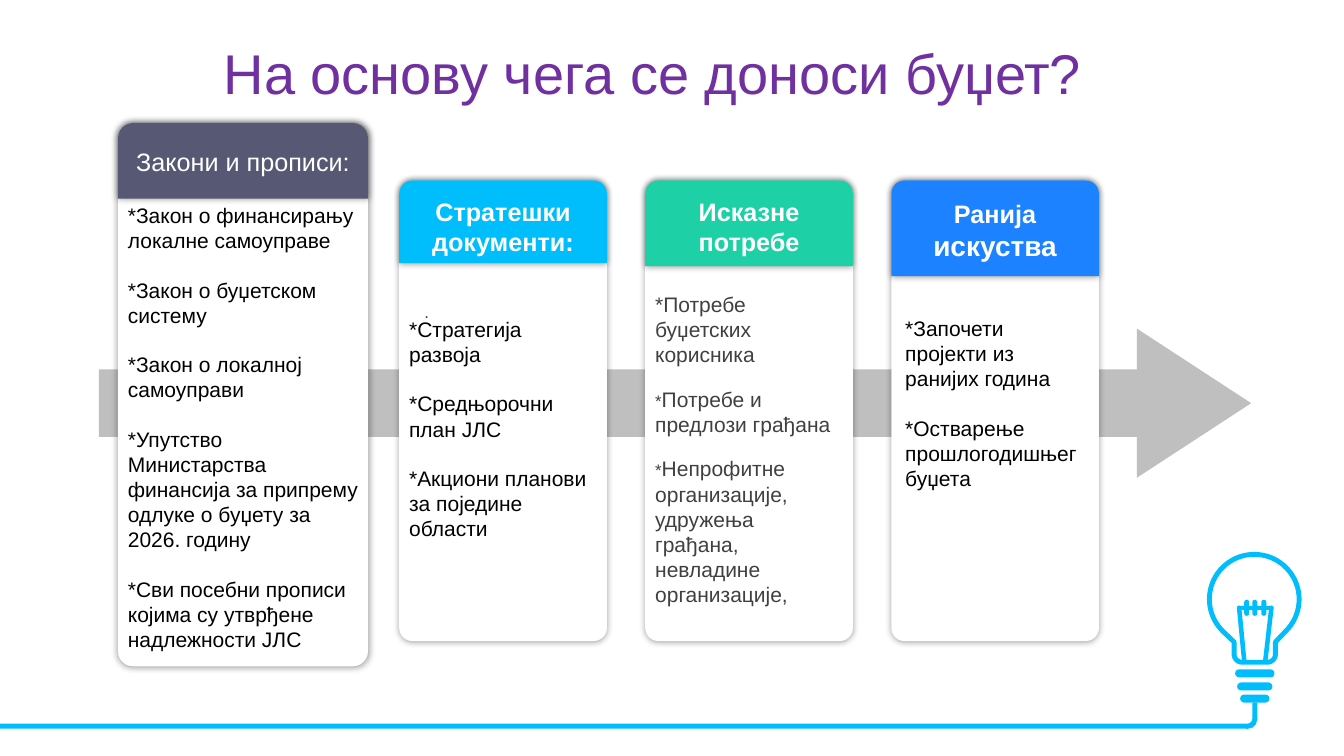
import math
from dataclasses import dataclass

from lxml import etree
from pptx import Presentation
from pptx.dml.color import RGBColor
from pptx.enum.shapes import MSO_CONNECTOR, MSO_SHAPE
from pptx.enum.text import MSO_ANCHOR, MSO_AUTO_SIZE, PP_ALIGN
from pptx.oxml import parse_xml
from pptx.oxml.ns import nsdecls, qn
from pptx.util import Pt

EMU_PER_PX = 9144  # 100 px to the inch
TITLE_ONLY = 5
RECT, PILL, ARROW = MSO_SHAPE.RECTANGLE, MSO_SHAPE.ROUNDED_RECTANGLE, MSO_SHAPE.RIGHT_ARROW
TOP_ROUNDED, BEND = MSO_SHAPE.ROUND_2_SAME_RECTANGLE, MSO_SHAPE.BLOCK_ARC
STRAIGHT = MSO_CONNECTOR.STRAIGHT
TOP, MIDDLE = MSO_ANCHOR.TOP, MSO_ANCHOR.MIDDLE
LEFT, CENTER = PP_ALIGN.LEFT, PP_ALIGN.CENTER
NO_AUTOFIT = MSO_AUTO_SIZE.NONE


@dataclass(frozen=True)
class Theme:
    font: str = "Arial"
    title: str = "7030A0"
    white: str = "FFFFFF"
    black: str = "000000"
    grey_text: str = "404040"
    arrow: str = "BFBFBF"
    laws: str = "565874"
    strategy: str = "00BDFB"
    needs: str = "1ED0A6"
    experience: str = "1C82FF"
    title_pt: float = 40
    heading_pt: float = 18
    large_heading_pt: float = 20
    body_pt: float = 15
    small_pt: float = 12


THEME = Theme()


@dataclass(frozen=True)
class Box:
    left: int
    top: int
    width: int
    height: int

    def emu(self) -> list[int]:
        return [px(v) for v in (self.left, self.top, self.width, self.height)]


@dataclass(frozen=True)
class Run:
    text: str
    size: float = THEME.body_pt
    color: str = THEME.black
    bold: bool = False


@dataclass(frozen=True)
class Card:
    frame: Box
    radius: int
    header_height: int
    header_color: str
    heading: list[Run]
    heading_inset: int
    body: Box
    items: list[list[Run]]
    item_gap: float = 17.25


def px(value: float) -> int:
    return round(value * EMU_PER_PX)


def heading(text: str, size: float = THEME.heading_pt, bold: bool = True) -> Run:
    return Run(text, size, THEME.white, bold)


def need(text: str, star_size: float = THEME.small_pt) -> list[Run]:
    return [Run("*", star_size, THEME.grey_text), Run(text, color=THEME.grey_text)]


def write(frame, paragraphs: list[list[Run]], align=LEFT, gap: float = 0,
          anchor=TOP, inset_x: int = 10, inset_top: int = 5) -> None:
    settings = {"word_wrap": True, "auto_size": NO_AUTOFIT, "vertical_anchor": anchor,
                "margin_left": px(inset_x), "margin_right": px(inset_x),
                "margin_top": px(inset_top), "margin_bottom": px(5)}
    for name, value in settings.items():
        setattr(frame, name, value)
    for index, runs in enumerate(paragraphs):
        paragraph = frame.add_paragraph() if index else frame.paragraphs[0]
        paragraph.alignment = align
        if index:
            paragraph.space_before = Pt(gap)
        for part in runs:
            run = paragraph.add_run()
            run.text = part.text
            for name, value in {"name": THEME.font, "size": Pt(part.size), "bold": part.bold}.items():
                setattr(run.font, name, value)
            run.font.color.rgb = RGBColor.from_string(part.color)


def paint(shape, color: str) -> None:
    shape.shadow.inherit = False
    shape.fill.solid()
    shape.fill.fore_color.rgb = RGBColor.from_string(color)
    shape.line.fill.background()


def add_block(slide, kind, box: Box, color: str, adjustments: tuple[float, ...] = ()):
    shape = slide.shapes.add_shape(kind, *box.emu())
    for index, value in enumerate(adjustments):
        shape.adjustments[index] = value
    paint(shape, color)
    return shape


def add_glow(shape) -> None:
    """Put a soft, centred dark shadow behind the shape."""
    shape._element.spPr.find(qn("a:effectLst")).append(parse_xml(
        f'<a:outerShdw {nsdecls("a")} blurRad="63500" dist="0" dir="0" algn="ctr" rotWithShape="0">'
        f'<a:srgbClr val="{THEME.black}"><a:alpha val="40000"/></a:srgbClr></a:outerShdw>'))


def add_text(slide, box: Box, paragraphs: list[list[Run]], gap: float = 0) -> None:
    write(slide.shapes.add_textbox(*box.emu()).text_frame, paragraphs, gap=gap)


def add_card(slide, card: Card) -> None:
    frame = card.frame
    header_box = Box(frame.left, frame.top, frame.width, card.header_height)
    panel = add_block(slide, PILL, frame, THEME.white, (card.radius / frame.width,))
    header = add_block(slide, TOP_ROUNDED, header_box, card.header_color,
                       (card.radius / card.header_height, 0))
    for part in (panel, header):
        add_glow(part)
    write(header.text_frame, [card.heading], CENTER, inset_x=5, inset_top=card.heading_inset)
    add_text(slide, card.body, card.items, card.item_gap)


def arc(x: float, y: float, radius: float, start: int, end: int) -> list[tuple[int, int]]:
    """Points along a circle, angles in degrees clockwise from the right."""
    steps = 3 * max(4, abs(end - start) // 15)
    angles = [math.radians(start + (end - start) * i / steps) for i in range(steps + 1)]
    return [(px(x + radius * math.cos(a)), px(y + radius * math.sin(a))) for a in angles]


def add_bulb(slide) -> None:
    center, color = 1244, THEME.strategy
    outline = (arc(center, 594.5, 44.5, 135, 405)
               + [(px(1265), px(637))] + arc(1257, 649, 8, 0, 90)
               + arc(1232, 649, 8, 90, 180) + [(px(1224), px(637))])
    builder = slide.shapes.build_freeform(*outline[0], scale=1.0)
    builder.add_line_segments(outline[1:], close=True)
    glass = builder.convert_to_shape()
    paint(glass, THEME.white)
    glass.line.color.rgb = RGBColor.from_string(color)
    glass.line.width = Pt(3.5)

    for width, top in ((39, 664), (35, 677), (29, 689)):
        add_block(slide, PILL, Box(center - width // 2, top, width, 8), color, (0.5,))
    add_block(slide, PILL, Box(1227, 601, 36, 4), color, (0.5,))
    for left in (1234, 1242, 1251):
        add_block(slide, PILL, Box(left, 595, 5, 16), color, (0.5,))
    for top_x, bottom_x in ((1229, 1234), (1261, 1255)):
        leg = slide.shapes.add_connector(STRAIGHT, px(top_x), px(603), px(bottom_x), px(655))
        leg.line.color.rgb = RGBColor.from_string(color)
        leg.line.width = Pt(3.25)
        leg.line._get_or_add_ln().set("cap", "rnd")
        etree.SubElement(leg._element.spPr, qn("a:effectLst"))

    add_block(slide, RECT, Box(0, 718, 1237, 5), color)
    add_block(slide, RECT, Box(1242, 697, 5, 17), color)
    add_block(slide, BEND, Box(1228, 704, 19, 19), color, (213.39, 60.92, 0.27))


CARDS = [
    Card(Box(117, 122, 248, 539), 15, 75, THEME.laws,
         [heading("Закони и прописи:", bold=False)], 19, Box(117, 196, 248, 464),
         [[Run("*Закон о финансирању локалне самоуправе")],
          [Run("*Закон о буџетском систему")],
          [Run("*Закон о локалној самоуправи")],
          [Run("*Упутство Министарства финансија за припрему одлуке о буџету за 2026. годину")],
          [Run("*Сви посебни прописи којима су утврђене надлежности ЈЛС")]]),
    Card(Box(396, 179, 206, 457), 13, 82, THEME.strategy,
         [heading("Стратешки документи:")], 12, Box(396, 309, 206, 237),
         [[Run("*Стратегија развоја")],
          [Run("*Средњорочни план ЈЛС")],
          [Run("*Акциони планови за поједине области")]]),
    Card(Box(640, 179, 206, 457), 13, 85, THEME.needs,
         [heading("Исказне потребе")], 12, Box(640, 284, 206, 323),
         [need("Потребе буџетских корисника", THEME.body_pt),
          need("Потребе и предлози грађана"),
          need("Непрофитне организације, удружења грађана, невладине организације,")], 13.8),
    Card(Box(884, 179, 206, 457), 13, 95, THEME.experience,
         [heading("Ранија"), heading(" искуства", THEME.large_heading_pt)], 11,
         Box(888, 308, 198, 200),
         [[Run("*Започети пројекти из ранијих година")],
          [Run("*Остварење прошлогодишњег буџета")]]),
]


def main() -> None:
    deck = Presentation()
    deck.slide_width, deck.slide_height = px(1333), px(750)
    slide = deck.slides.add_slide(deck.slide_layouts[TITLE_ONLY])

    title = slide.shapes.title
    title.left, title.top, title.width, title.height = Box(14, 36, 1266, 79).emu()
    write(title.text_frame, [[Run("На основу чега се доноси буџет?", THEME.title_pt, THEME.title)]],
          CENTER, anchor=MIDDLE)
    title.text_frame.paragraphs[0].line_spacing = 0.9

    add_bulb(slide)
    add_block(slide, ARROW, Box(98, 326, 1143, 148), THEME.arrow, (0.453, 0.766))
    for card in CARDS:
        add_card(slide, card)
    add_text(slide, Box(411, 294, 177, 30), [[Run(".", THEME.small_pt, THEME.grey_text)]])
    deck.save("out.pptx")


if __name__ == "__main__":
    main()
